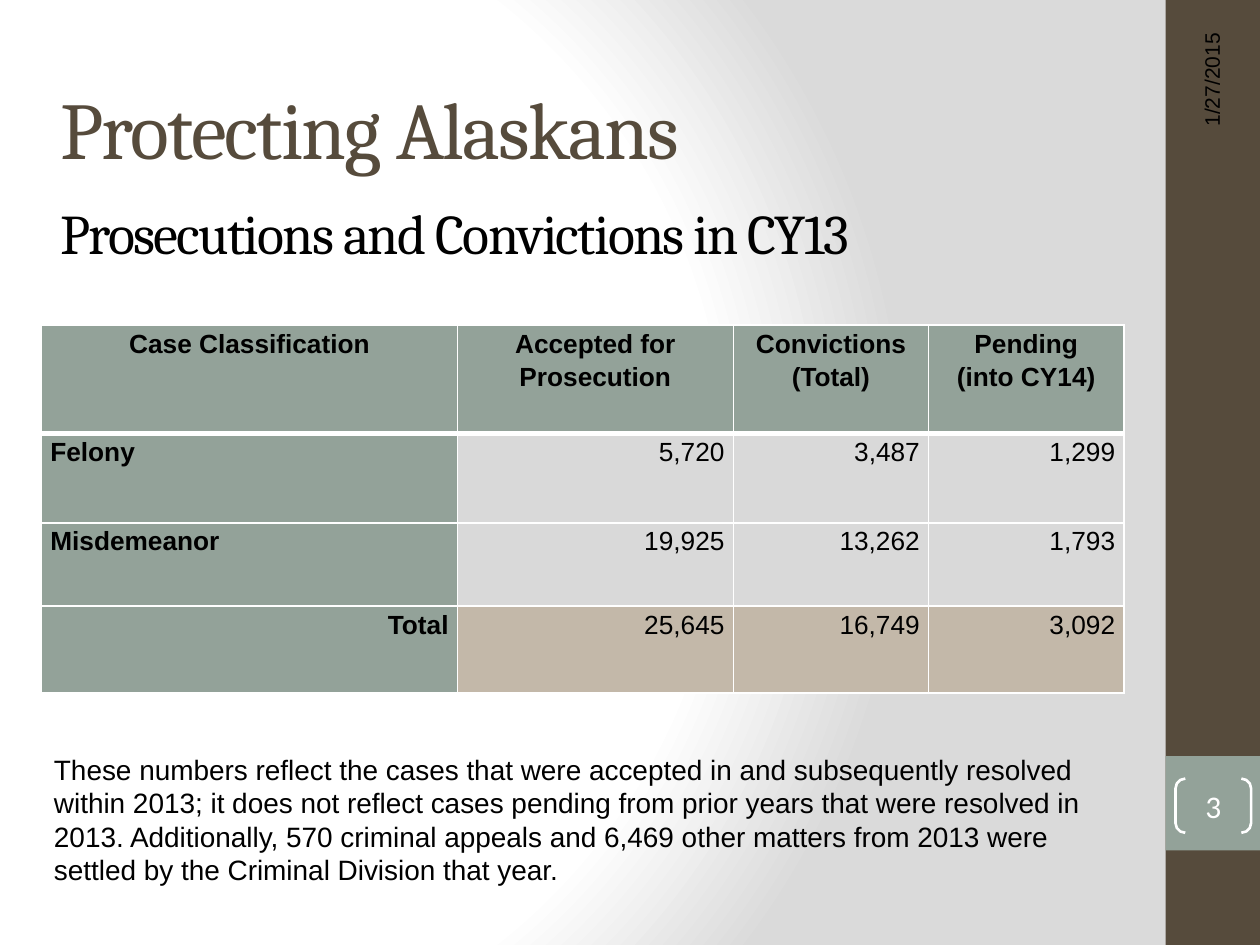
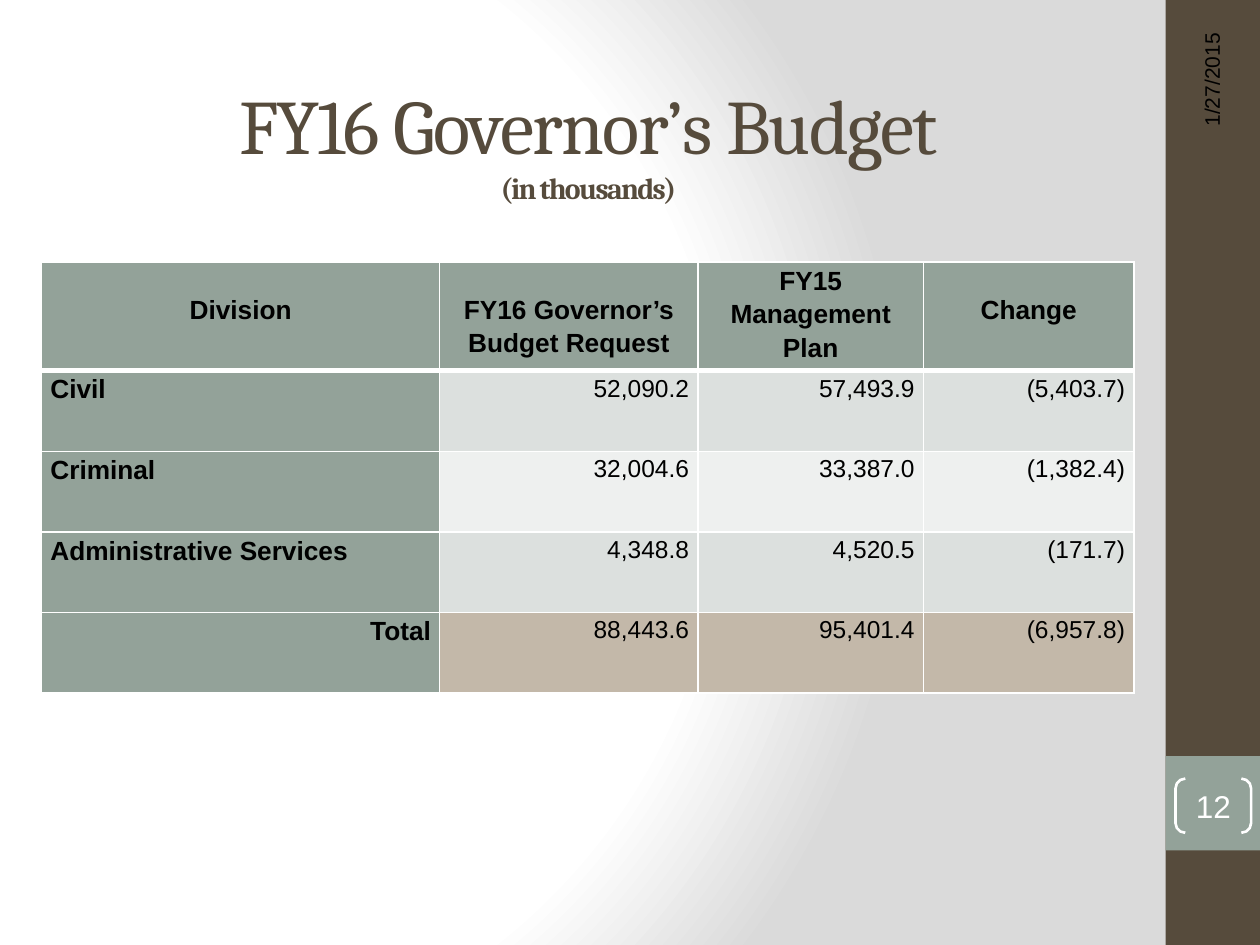
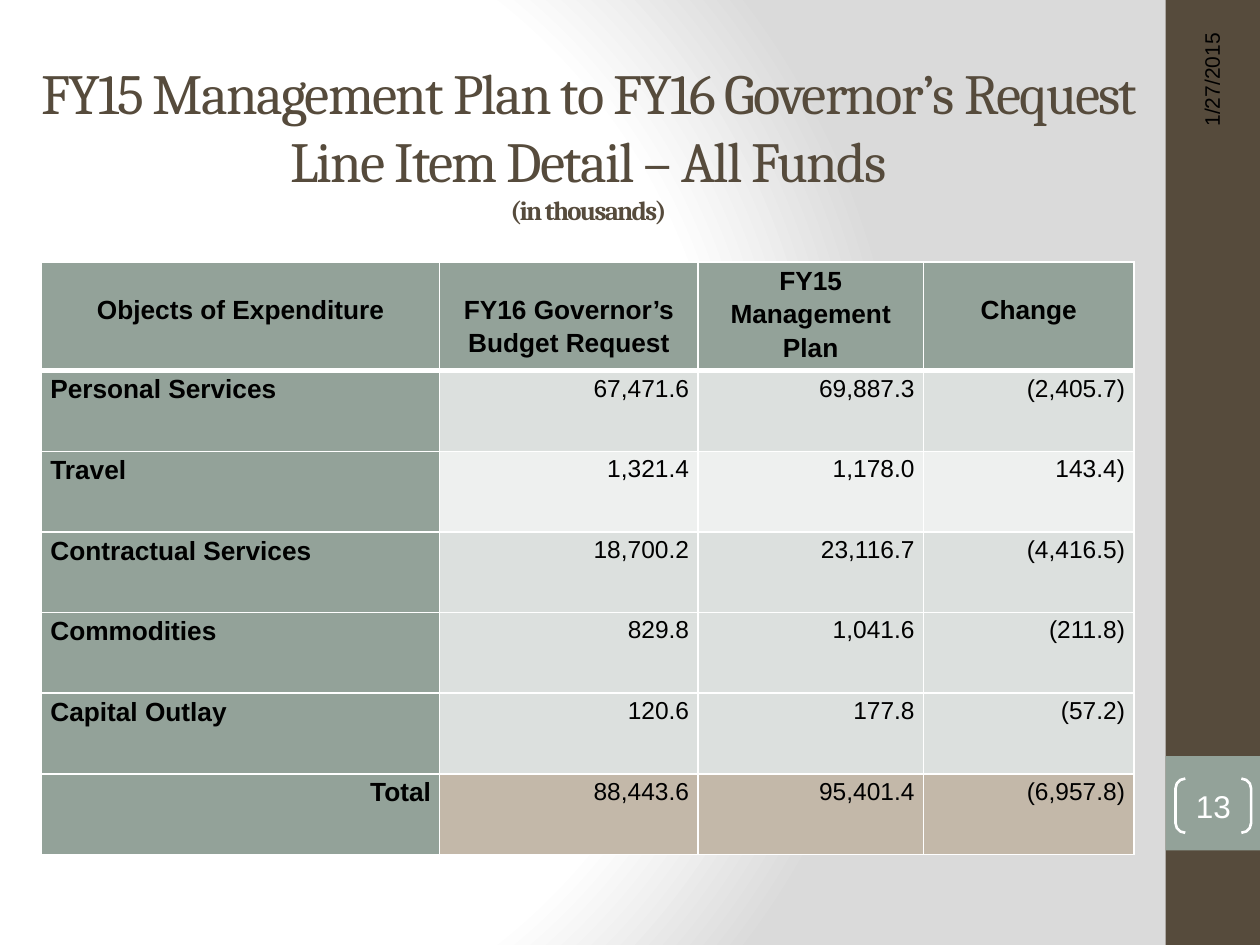
import pptx
import pptx.util
import pptx.dml.color
import pptx.enum.shapes
import pptx.enum.text
import pptx.oxml.ns
import lxml.etree

Inches = pptx.util.Inches
Pt = pptx.util.Pt
qn = pptx.oxml.ns.qn
Align = pptx.enum.text.PP_ALIGN
Anchor = pptx.enum.text.MSO_ANCHOR
Shape = pptx.enum.shapes.MSO_SHAPE

BROWN = "564B3C"
SAGE = "93A299"
TAN = "C3B8A9"
GRAY = "D9D9D9"
PALE = "DCE0DE"
FAINT = "EEF0EF"
WHITE = "FFFFFF"
BLACK = "000000"
EDGE = "42402C"
SANS = "Arial"
SERIF = "Cambria"
DROP = 0.23


def tint(text):
    return pptx.dml.color.RGBColor.from_string(text)


def add_node(parent, tag, **attrs):
    return lxml.etree.SubElement(parent, qn(tag), attrs)


def add_solid(parent, color):
    add_node(add_node(parent, "a:solidFill"), "a:srgbClr", val=color)


def set_font(font, size, color=BLACK, face=SANS, bold=False):
    font.size = Pt(size)
    font.name = face
    font.bold = bold
    font.color.rgb = tint(color)


def set_back(master):
    master.background.fill.gradient()
    grad = master.element.find(".//" + qn("a:gradFill"))
    for child in list(grad):
        grad.remove(child)
    stops = add_node(grad, "a:gsLst")
    for place, color in ((0, WHITE), (75, WHITE), (100, "DADADA")):
        stop = add_node(stops, "a:gs", pos=str(place * 1000))
        add_node(stop, "a:srgbClr", val=color)
    ring = add_node(grad, "a:path", path="circle")
    add_node(ring, "a:fillToRect", l="20000", t="50000", r="100000", b="50000")


def add_band(slide, top, height, color):
    band = slide.shapes.add_shape(
        Shape.RECTANGLE, Inches(9.25), Inches(top), Inches(0.75), Inches(height))
    band.shadow.inherit = False
    band.fill.solid()
    band.fill.fore_color.rgb = tint(color)
    band.line.fill.background()


def add_text(slide, box, text, size, align=Align.LEFT):
    shape = slide.shapes.add_textbox(*map(Inches, box))
    frame = shape.text_frame
    frame.word_wrap = True
    frame.text = text
    para = frame.paragraphs[0]
    para.alignment = align
    set_font(para.font, size)
    return shape


def add_number(slide, number, face):
    mark = slide.shapes.add_shape(
        Shape.DOUBLE_BRACKET, Inches(9.33), Inches(6.18), Inches(0.6), Inches(0.43))
    mark.shadow.inherit = False
    mark.adjustments[0] = 0.18
    mark.fill.background()
    mark.line.color.rgb = tint(WHITE)
    mark.line.width = Pt(1.5)
    frame = mark.text_frame
    frame.margin_left = frame.margin_right = 0
    frame.margin_top = frame.margin_bottom = 0
    frame.vertical_anchor = Anchor.MIDDLE
    frame.text = number
    para = frame.paragraphs[0]
    para.alignment = Align.CENTER
    set_font(para.font, 18, WHITE, face)


def add_slide(deck, number, face=SANS):
    slide = deck.slides.add_slide(deck.slide_layouts[5])
    add_band(slide, 0, 7.5, BROWN)
    add_band(slide, 6, 0.75, SAGE)
    date = add_text(slide, (8.28, 1.3, 2.67, 0.4), "1/27/2015", 12, Align.RIGHT)
    date.rotation = 270
    date.text_frame.vertical_anchor = Anchor.MIDDLE
    add_number(slide, number, face)
    return slide


def place_title(slide, box):
    title = slide.shapes.title
    title.left, title.top, title.width, title.height = map(Inches, box)
    frame = title.text_frame
    frame.word_wrap = True
    frame.auto_size = pptx.enum.text.MSO_AUTO_SIZE.NONE
    frame.vertical_anchor = Anchor.MIDDLE
    return frame


def add_run(para, text, size, color=BROWN, bold=False):
    run = para.add_run()
    run.text = text
    set_font(run.font, size, color, SERIF, bold)
    props = run.font._element if hasattr(run.font, "_element") else run._r.get_or_add_rPr()
    props.set("spc", "-100")
    return props


def add_heading(slide, text, size, small):
    para = place_title(slide, (0.17, 0.5, 9, 1.25)).paragraphs[0]
    para.alignment = Align.CENTER
    props = add_run(para, text, size)
    edge = add_node(props, "a:ln", w="12700")
    add_solid(edge, EDGE)
    props.insert(0, edge)
    para.add_line_break()
    add_run(para, "(in thousands)", small, bold=True)


def set_edges(cell, row):
    props = cell._tc.get_or_add_tcPr()
    for side in "LRTB":
        thick = (side, row) in (("B", 0), ("T", 1))
        line = add_node(props, "a:ln" + side, w=str(Pt(3 if thick else 1)))
        add_solid(line, WHITE)


def fill_cell(cell, row, text, size, color, align, bold, drop=0):
    set_edges(cell, row)
    cell.fill.solid()
    cell.fill.fore_color.rgb = tint(color)
    cell.margin_left = cell.margin_right = Inches(0.07)
    cell.margin_top = Inches(drop)
    cell.margin_bottom = 0
    cell.text_frame.text = text
    for para in cell.text_frame.paragraphs:
        para.alignment = align
        para.line_spacing = 1.15
        set_font(para.font, size, bold=bold)


def add_grid(slide, top, widths, heights, rows, shades, size, drops):
    shape = slide.shapes.add_table(
        len(rows), len(widths), Inches(0.33), Inches(top),
        Inches(sum(widths)), Inches(sum(heights)))
    table = shape.table
    table.first_row = table.horz_banding = False
    for col, width in zip(table.columns, widths):
        col.width = Inches(width)
    for line, height in zip(table.rows, heights):
        line.height = Inches(height)
    last = len(rows) - 1
    for r, row in enumerate(rows):
        for c, text in enumerate(row):
            cell = table.cell(r, c)
            if r == 0:
                fill_cell(cell, r, text, 15, SAGE, Align.CENTER, True, drops[c])
            elif c == 0:
                align = Align.RIGHT if r == last else Align.LEFT
                fill_cell(cell, r, text, 15, SAGE, align, True)
            else:
                color = TAN if r == last else shades[r - 1]
                fill_cell(cell, r, text, size, color, Align.RIGHT, False)


def add_budget(slide, label, rows):
    head = (label, "FY16 Governor’s Budget Request", "FY15 Management Plan", "Change")
    total = ("Total", "88,443.6", "95,401.4", "(6,957.8)")
    shades = [FAINT if i == 1 else PALE for i in range(len(rows))]
    heights = [0.78] + [0.64] * (len(rows) + 1)
    add_grid(slide, 2.08, (3.16, 2.05, 1.79, 1.67), heights,
             [head, *rows, total], shades, 14, (DROP, DROP, 0, DROP))


def build_cases(deck):
    slide = add_slide(deck, "3", "Calibri")
    frame = place_title(slide, (0, 0.34, 9, 2.06))
    frame.margin_left = Inches(0.48)
    first = frame.paragraphs[0]
    add_run(first, "Protecting Alaskans", 46)
    second = frame.add_paragraph()
    second.space_before = Pt(13)
    add_run(second, "Prosecutions and Convictions in CY13", 32, BLACK)
    for para in (first, second):
        para.alignment = Align.LEFT
    rows = (
        ("Case Classification", "Accepted for Prosecution",
         "Convictions\n(Total)", "Pending\n(into CY14)"),
        ("Felony", "5,720", "3,487", "1,299"),
        ("Misdemeanor", "19,925", "13,262", "1,793"),
        ("Total", "25,645", "16,749", "3,092"),
    )
    add_grid(slide, 2.58, (3.3, 2.19, 1.55, 1.55), (0.86, 0.71, 0.66, 0.69),
             rows, (GRAY, GRAY), 15, (0, 0, 0, 0))
    add_text(slide, (0.33, 5.92, 8.58, 1.18),
             "These numbers reflect the cases that were accepted in and subsequently "
             "resolved within 2013; it does not reflect cases pending from prior years "
             "that were resolved in 2013. Additionally, 570 criminal appeals and 6,469 "
             "other matters from 2013 were settled by the Criminal Division that year.", 16)


def build_split(deck):
    slide = add_slide(deck, "12")
    add_heading(slide, "FY16 Governor’s Budget", 44, 17)
    add_budget(slide, "Division", (
        ("Civil", "52,090.2", "57,493.9", "(5,403.7)"),
        ("Criminal", "32,004.6", "33,387.0", "(1,382.4)"),
        ("Administrative Services", "4,348.8", "4,520.5", "(171.7)"),
    ))


def build_items(deck):
    slide = add_slide(deck, "13")
    add_heading(slide, "FY15 Management Plan to FY16 Governor’s Request "
                "Line Item Detail – All Funds", 32.4, 15.3)
    add_budget(slide, "Objects of Expenditure", (
        ("Personal Services", "67,471.6", "69,887.3", "(2,405.7)"),
        ("Travel", "1,321.4", "1,178.0", "143.4)"),
        ("Contractual Services", "18,700.2", "23,116.7", "(4,416.5)"),
        ("Commodities", "829.8", "1,041.6", "(211.8)"),
        ("Capital Outlay", "120.6", "177.8", "(57.2)"),
    ))


def main():
    deck = pptx.Presentation()
    deck.slide_width = Inches(10)
    deck.slide_height = Inches(7.5)
    set_back(deck.slide_master)
    build_cases(deck)
    build_split(deck)
    build_items(deck)
    deck.save("out.pptx")


if __name__ == "__main__":
    main()
